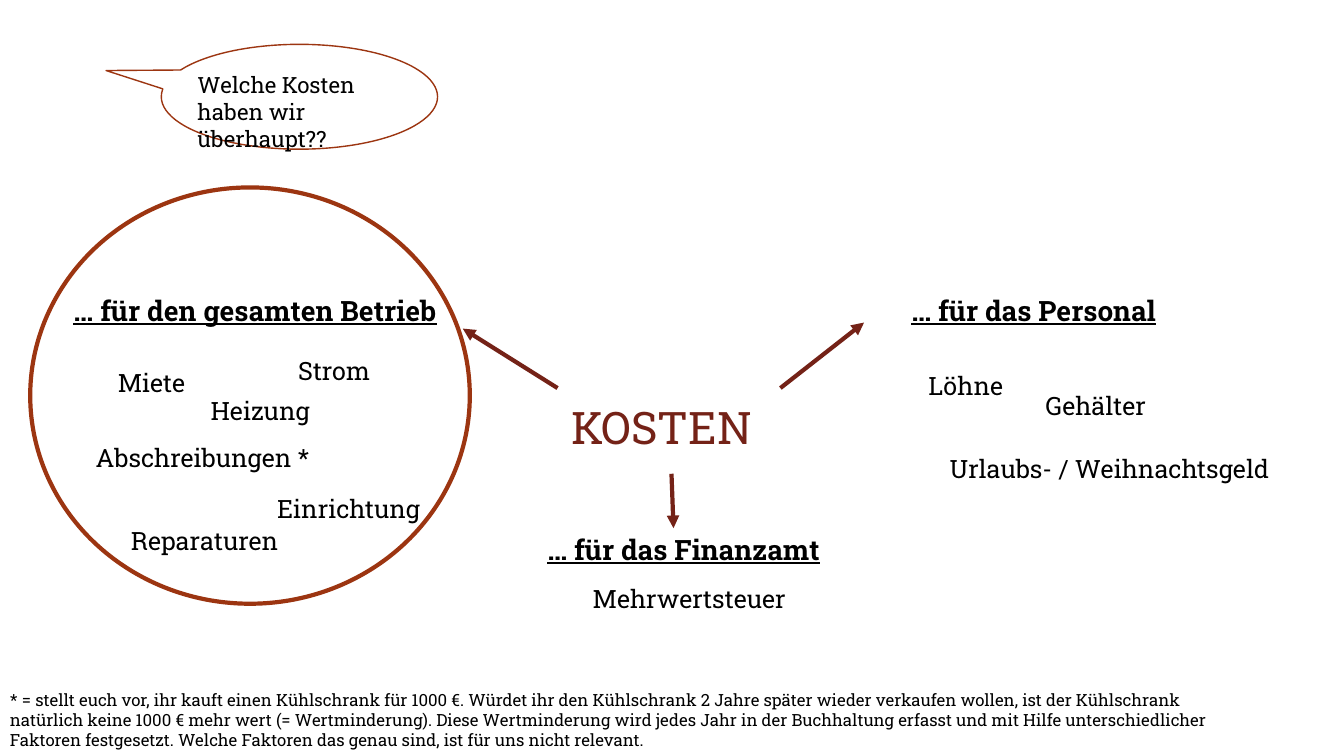
from dataclasses import dataclass

from pptx import Presentation
from pptx.dml.color import RGBColor
from pptx.enum.shapes import MSO_CONNECTOR, MSO_SHAPE
from pptx.enum.text import MSO_ANCHOR, MSO_AUTO_SIZE, PP_ALIGN
from pptx.oxml.ns import qn
from pptx.util import Pt
from lxml.etree import SubElement

PX = 9144


@dataclass(frozen=True)
class Theme:
    """Colours, font, type sizes and line widths of the slide."""
    font: str = "Roboto Slab"
    ink: RGBColor = RGBColor(0x00, 0x00, 0x00)
    rust: RGBColor = RGBColor(0x9C, 0x35, 0x11)
    maroon: RGBColor = RGBColor(0x74, 0x22, 0x17)
    title: int = 32
    heading: int = 20
    item: int = 18
    question: int = 16
    note: int = 12
    thin: int = 1
    thick: int = 3


THEME = Theme()


def scaled(*lengths):
    """Turn px lengths into EMU."""
    return [length * PX for length in lengths]


def write(box, text, size, color=THEME.ink, heading=False):
    """Fill a text shape with one left-aligned run."""
    frame = box.text_frame
    frame.word_wrap = True
    frame.auto_size = MSO_AUTO_SIZE.NONE
    frame.vertical_anchor = MSO_ANCHOR.TOP
    para = frame.paragraphs[0]
    para.alignment = PP_ALIGN.LEFT
    span = para.add_run()
    span.text = text
    span.font.name = THEME.font
    span.font.size = Pt(size)
    span.font.color.rgb = color
    if heading:
        span.font.bold = True
        span.font.underline = True


def add_label(page, box, text, size, heading=False):
    """Add a text box at the given px box."""
    write(page.shapes.add_textbox(*scaled(*box)), text, size, heading=heading)


def add_outline(page, kind, box, width):
    """Add an unfilled rust outline and return it."""
    shape = page.shapes.add_shape(kind, *scaled(*box))
    shape.shadow.inherit = False
    shape.fill.background()
    shape.line.color.rgb = THEME.rust
    shape.line.width = Pt(width)
    return shape


def add_arrow(page, start, end):
    """Draw a maroon arrow between two px points."""
    arrow = page.shapes.add_connector(MSO_CONNECTOR.STRAIGHT, *scaled(*start, *end))
    arrow.line.color.rgb = THEME.maroon
    arrow.line.width = Pt(THEME.thick)
    SubElement(arrow.line._get_or_add_ln(), qn("a:tailEnd"), type="triangle")
    SubElement(arrow._element.spPr, qn("a:effectLst"))


def add_question(page, box):
    """Add the speech bubble with the opening question."""
    left, top, width, height = box
    bubble = add_outline(page, MSO_SHAPE.OVAL_CALLOUT, box, THEME.thin)
    bubble.adjustments[0] = -0.7
    bubble.adjustments[1] = -0.25
    add_label(page, (left + 26, top + 22, width - 32, height - 40),
              "Welche Kosten haben wir überhaupt??", THEME.question)


def add_centre(page, box):
    """Place the title in the middle and send out the three arrows."""
    left, top, width, height = box
    title = page.shapes.title
    title.left, title.top, title.width, title.height = scaled(*box)
    write(title, "KOSTEN", THEME.title, THEME.maroon)
    add_arrow(page, (left - 4, top - 7), (left - 98, top - 66))
    add_arrow(page, (left + 109, top + 78), (left + 111, top + 132))
    add_arrow(page, (left + 217, top - 7), (left + 300, top - 72))


def add_branch(page, box, heading, items):
    """Add an underlined heading and the cost items scattered below it."""
    left, top, width, height = box
    add_label(page, (left, top, width, 44), heading, THEME.heading, heading=True)
    for text, across, down, item_width in items:
        add_label(page, (left + across, top + down, item_width, 40), text, THEME.item)


def add_business(page, box):
    """Add the circled branch for the whole business."""
    left, top, width, height = box
    add_branch(page, (left + 33, top + 100, 411, 270), "… für den gesamten Betrieb", [
        ("Miete", 44, 73, 107),
        ("Strom", 223, 62, 107),
        ("Heizung", 136, 101, 139),
        ("Abschreibungen *", 22, 148, 258),
        ("Einrichtung", 202, 198, 182),
        ("Reparaturen", 57, 230, 187),
    ])
    add_outline(page, MSO_SHAPE.OVAL, box, THEME.thick)


def add_staff(page, box):
    """Add the branch for staff costs."""
    add_branch(page, box, "… für das Personal", [
        ("Löhne", 17, 76, 107),
        ("Gehälter", 133, 96, 160),
        ("Urlaubs- / Weihnachtsgeld", 38, 159, 354),
    ])


def add_tax(page, box):
    """Add the branch for the tax office."""
    add_branch(page, box, "… für das Finanzamt", [("Mehrwertsteuer", 45, 51, 224)])


def add_footnote(page, box):
    """Add the explanation of depreciation."""
    add_label(page, box, (
        "* = stellt euch vor, ihr kauft einen Kühlschrank für 1000 €. Würdet ihr den "
        "Kühlschrank 2 Jahre später wieder verkaufen wollen, ist der Kühlschrank "
        "natürlich keine 1000 € mehr wert (= Wertminderung). Diese Wertminderung wird "
        "jedes Jahr in der Buchhaltung erfasst und mit Hilfe unterschiedlicher Faktoren "
        "festgesetzt. Welche Faktoren das genau sind, ist für uns nicht relevant."
    ), THEME.note)


def main():
    """Build the cost overview slide."""
    deck = Presentation()
    deck.slide_width, deck.slide_height = scaled(1333, 750)
    page = deck.slides.add_slide(deck.slide_layouts.get_by_name("Title Only"))
    add_question(page, (160, 44, 274, 104))
    add_centre(page, (557, 392, 245, 64))
    add_business(page, (30, 186, 436, 413))
    add_staff(page, (894, 286, 293, 199))
    add_tax(page, (533, 523, 324, 91))
    add_footnote(page, (0, 679, 1247, 71))
    deck.save("out.pptx")


if __name__ == "__main__":
    main()
